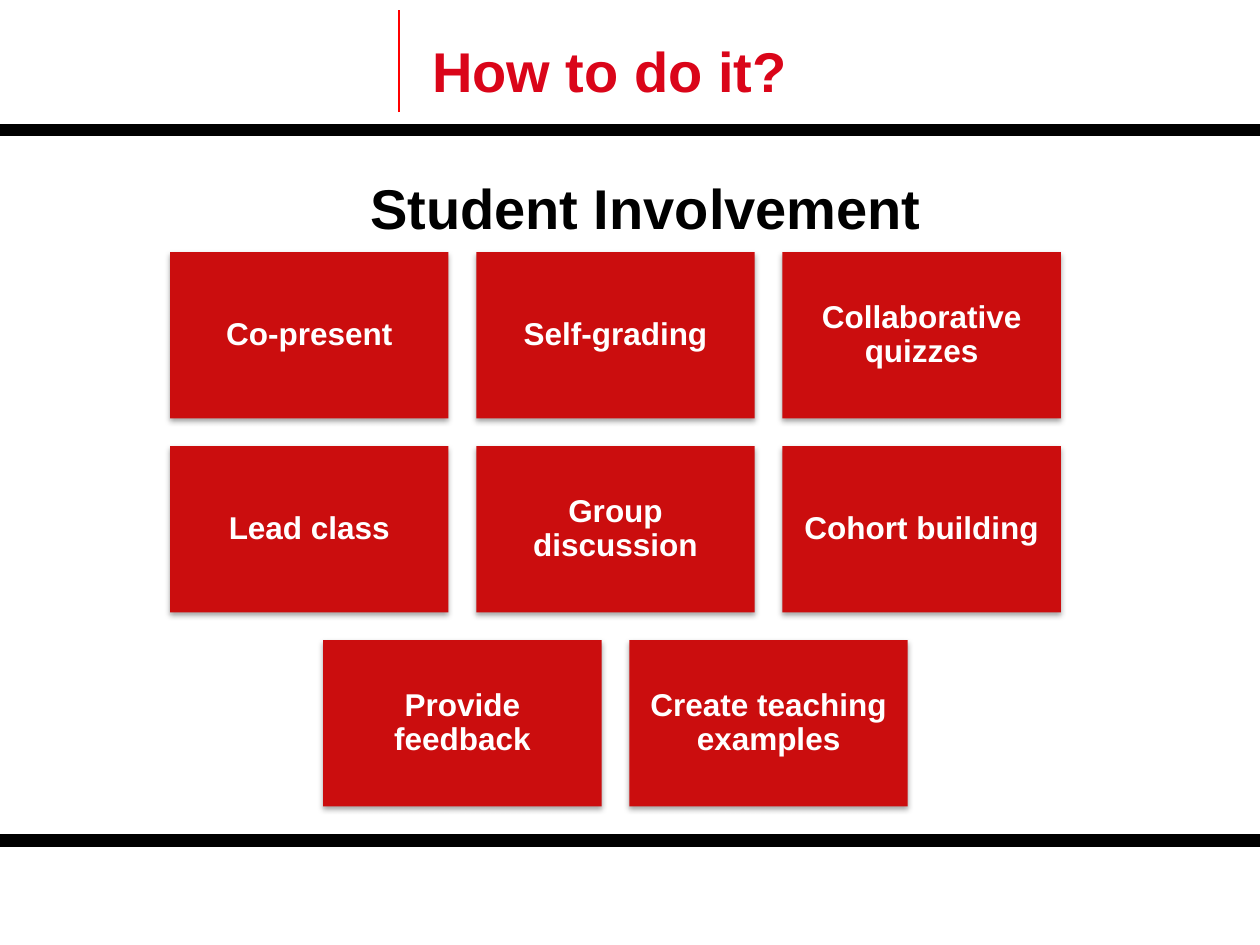
from lxml import etree
from pptx import Presentation
from pptx.dml.color import RGBColor
from pptx.enum.shapes import MSO_CONNECTOR, MSO_SHAPE
from pptx.enum.text import MSO_ANCHOR, MSO_AUTO_SIZE, PP_ALIGN
from pptx.oxml import parse_xml
from pptx.oxml.ns import qn
from pptx.util import Inches, Pt

SHADOW = """
<a:outerShdw xmlns:a="http://schemas.openxmlformats.org/drawingml/2006/main"
    blurRad="40000" dist="23000" dir="5400000" rotWithShape="0">
  <a:srgbClr val="000000"><a:alpha val="35000"/></a:srgbClr>
</a:outerShdw>"""


def color(value):
    return RGBColor.from_string(value)


def style(p, size, value, align):
    p.alignment = align
    p.font.name = "Arial"
    p.font.size = Pt(size)
    p.font.bold = True
    p.font.color.rgb = color(value)


prs = Presentation()
prs.slide_width = Inches(10)
prs.slide_height = Inches(7.5)
s = prs.slides.add_slide(prs.slide_layouts[5])

rules = [
    (3.17, 0.89, 3.17, 0.08, "FF0000", 1.25),
    (-0.02, 1.03, 10.01, 1.03, "000000", 7),
    (0, 6.67, 10.03, 6.67, "000000", 7),
]
for x1, y1, x2, y2, value, width in rules:
    line = s.shapes.add_connector(
        MSO_CONNECTOR.STRAIGHT, Inches(x1), Inches(y1), Inches(x2), Inches(y2)
    )
    line.line.color.rgb = color(value)
    line.line.width = Pt(width)
    etree.SubElement(line._element.spPr, qn("a:effectLst"))

title = s.shapes.title
title.left, title.top = Inches(3.33), Inches(0.26)
title.width, title.height = Inches(6.21), Inches(0.61)
tf = title.text_frame
tf.text = "How to do it?"
tf.word_wrap = False
tf.auto_size = MSO_AUTO_SIZE.NONE
tf.vertical_anchor = MSO_ANCHOR.BOTTOM
style(tf.paragraphs[0], 32, "DA0519", PP_ALIGN.LEFT)

rows = [
    ["Co-present", "Self-grading", "Collaborative quizzes"],
    ["Lead class", "Group discussion", "Cohort building"],
    ["Provide feedback", "Create teaching examples"],
]
left, top = Inches(1.35), Inches(2)
card_w, card_h, gap = Inches(2.21), Inches(1.32), Inches(0.22)
columns = len(rows[0])
for i, row in enumerate(rows):
    indent = (columns - len(row)) * (card_w + gap) // 2
    for j, text in enumerate(row):
        sp = s.shapes.add_shape(
            MSO_SHAPE.RECTANGLE,
            left + indent + j * (card_w + gap),
            top + i * (card_h + gap),
            card_w,
            card_h,
        )
        sp.fill.solid()
        sp.fill.fore_color.rgb = color("CB0D0E")
        sp.line.fill.background()
        sp.shadow.inherit = False
        sp._element.spPr.find(qn("a:effectLst")).append(parse_xml(SHADOW))
        tf = sp.text_frame
        tf.text = text
        tf.word_wrap = True
        tf.vertical_anchor = MSO_ANCHOR.MIDDLE
        tf.margin_left = tf.margin_right = Inches(0.07)
        tf.margin_top = tf.margin_bottom = Inches(0.07)
        p = tf.paragraphs[0]
        p.line_spacing = 0.9
        style(p, 18, "FFFFFF", PP_ALIGN.CENTER)

heading = s.shapes.add_textbox(Inches(2), Inches(1.33), Inches(6.25), Inches(0.64))
tf = heading.text_frame
tf.text = "Student Involvement"
tf.word_wrap = True
tf.auto_size = MSO_AUTO_SIZE.SHAPE_TO_FIT_TEXT
style(tf.paragraphs[0], 32, "000000", PP_ALIGN.CENTER)

prs.save("out.pptx")
